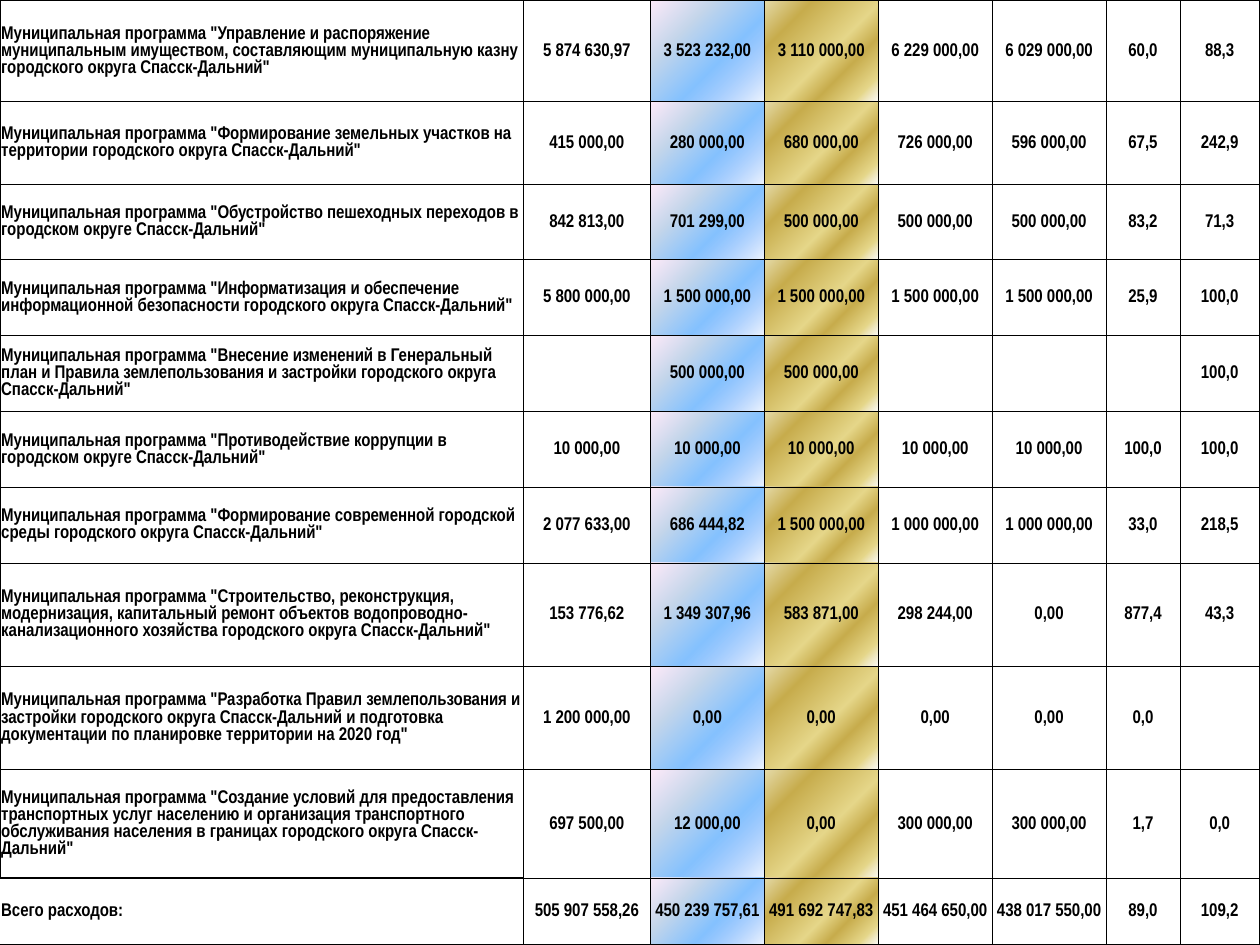
from lxml import etree
from pptx import Presentation
from pptx.dml.color import RGBColor
from pptx.enum.text import MSO_ANCHOR, PP_ALIGN
from pptx.oxml.ns import qn
from pptx.util import Pt

LEFT, CENTER, MIDDLE = PP_ALIGN.LEFT, PP_ALIGN.CENTER, MSO_ANCHOR.MIDDLE

PROGRAMS = [
    ("Управление и распоряжение муниципальным имуществом, составляющим "
     "муниципальную казну городского округа Спасск-Дальний",
     ["5 874 630,97", "3 523 232,00", "3 110 000,00", "6 229 000,00", "6 029 000,00", "60,0", "88,3"]),
    ("Формирование земельных участков на территории городского округа Спасск-Дальний",
     ["415 000,00", "280 000,00", "680 000,00", "726 000,00", "596 000,00", "67,5", "242,9"]),
    ("Обустройство пешеходных переходов в городском округе Спасск-Дальний",
     ["842 813,00", "701 299,00", "500 000,00", "500 000,00", "500 000,00", "83,2", "71,3"]),
    ("Информатизация и обеспечение информационной безопасности городского округа Спасск-Дальний",
     ["5 800 000,00", "1 500 000,00", "1 500 000,00", "1 500 000,00", "1 500 000,00", "25,9", "100,0"]),
    ("Внесение изменений в Генеральный план и Правила землепользования и "
     "застройки городского округа Спасск-Дальний",
     ["", "500 000,00", "500 000,00", "", "", "", "100,0"]),
    ("Противодействие коррупции в городском округе Спасск-Дальний",
     ["10 000,00", "10 000,00", "10 000,00", "10 000,00", "10 000,00", "100,0", "100,0"]),
    ("Формирование современной городской среды городского округа Спасск-Дальний",
     ["2 077 633,00", "686 444,82", "1 500 000,00", "1 000 000,00", "1 000 000,00", "33,0", "218,5"]),
    ("Строительство, реконструкция, модернизация, капитальный ремонт объектов "
     "водопроводно-канализационного хозяйства городского округа Спасск-Дальний",
     ["153 776,62", "1 349 307,96", "583 871,00", "298 244,00", "0,00", "877,4", "43,3"]),
    ("Разработка Правил землепользования и застройки городского округа Спасск-Дальний "
     "и подготовка документации по планировке территории на 2020 год",
     ["1 200 000,00", "0,00", "0,00", "0,00", "0,00", "0,0", ""]),
    ("Создание условий для предоставления транспортных услуг населению и организация "
     "транспортного обслуживания населения в границах городского округа Спасск-Дальний",
     ["697 500,00", "12 000,00", "0,00", "300 000,00", "300 000,00", "1,7", "0,0"]),
]
TOTAL = ["Всего расходов:", "505 907 558,26", "450 239 757,61", "491 692 747,83",
         "451 464 650,00", "438 017 550,00", "89,0", "109,2"]

COLORS = {"text": "000000", "border": "000000", "cell": "FFFFFF"}
# Column index -> (position %, colour, opacity %)
GRADIENTS = {
    2: [(0, "5E9EFF", 9), (40, "85C2FF", 100), (70, "C4D6EB", 100), (100, "FFEBFA", 100)],
    3: [(0, "E6DCAC", 8), (12, "E6D78A", 100), (30, "C7AC4C", 100),
        (45, "E6D78A", 100), (77, "C7AC4C", 100), (100, "E6DCAC", 100)],
}
UNFILLED = {(row, column) for row in (2, 3, 6) for column in (4, 5)}

COLUMN_WIDTHS = [299, 72.7] + [65.1] * 4 + [42.3, 45.3]
ROW_HEIGHTS = [58, 47.3, 42.9] + [43.4] * 4 + [58.9] * 2 + [62.3, 37.8]
THIN, THICK = 0.5, 1

CELL_FORMAT = {"margin_left": Pt(0.72), "margin_top": Pt(0.72), "margin_right": Pt(0.72),
               "margin_bottom": 0, "vertical_anchor": MIDDLE}
FONT_FORMAT = {"name": "Arial Narrow", "size": Pt(10.5), "bold": True}


def border_widths(row, column, last_row):
    """Widths of the left, right, top and bottom lines; 0 means no line."""
    widths = {"L": THIN, "R": THIN, "T": THIN, "B": THIN}
    if row == last_row and column <= 5:
        widths["B"] = THICK
    if column == 0 and row == last_row - 1:
        widths["B"] = THICK
    if column == 0 and row == last_row:
        widths.update(L=0, T=THICK)
    return widths


def add_borders(cell, widths):
    properties = cell._tc.get_or_add_tcPr()
    for side, width in widths.items():
        line = etree.SubElement(properties, qn(f"a:ln{side}"), w=str(int(Pt(width))))
        if width:
            fill = etree.SubElement(line, qn("a:solidFill"))
            etree.SubElement(fill, qn("a:srgbClr"), val=COLORS["border"])
        else:
            etree.SubElement(line, qn("a:noFill"))


def add_corner_gradient(cell, stops):
    """Circular gradient that starts from the lower right corner."""
    gradient = etree.SubElement(cell._tc.get_or_add_tcPr(), qn("a:gradFill"), rotWithShape="1")
    stop_list = etree.SubElement(gradient, qn("a:gsLst"))
    for position, color, opacity in stops:
        stop = etree.SubElement(stop_list, qn("a:gs"), pos=str(position * 1000))
        stop_color = etree.SubElement(stop, qn("a:srgbClr"), val=color)
        if opacity < 100:
            etree.SubElement(stop_color, qn("a:alpha"), val=str(opacity * 1000))
    circle = etree.SubElement(gradient, qn("a:path"), path="circle")
    etree.SubElement(circle, qn("a:fillToRect"), l="100000", t="100000")


def fill_cell(cell, row, column):
    if column in GRADIENTS:
        add_corner_gradient(cell, GRADIENTS[column])
    elif (row, column) in UNFILLED:
        cell.fill.background()
    else:
        cell.fill.solid()
        cell.fill.fore_color.rgb = RGBColor.from_string(COLORS["cell"])


def write_cell(cell, text, alignment):
    for name, value in CELL_FORMAT.items():
        setattr(cell, name, value)
    if not text:
        return
    paragraph = cell.text_frame.paragraphs[0]
    paragraph.alignment = alignment
    run = paragraph.add_run()
    run.text = text
    for name, value in FONT_FORMAT.items():
        setattr(run.font, name, value)
    run.font.color.rgb = RGBColor.from_string(COLORS["text"])


def main():
    presentation = Presentation()
    presentation.slide_width, presentation.slide_height = Pt(720), Pt(540)
    slide = presentation.slides.add_slide(presentation.slide_layouts[6])

    rows = [[f'Муниципальная программа "{title}"', *amounts] for title, amounts in PROGRAMS]
    rows.append(TOTAL)
    budget = slide.shapes.add_table(len(rows), len(TOTAL), 0, 0, Pt(720), Pt(540)).table
    budget.first_row = budget.horz_banding = False
    for column, width in zip(budget.columns, COLUMN_WIDTHS):
        column.width = Pt(width)
    for row, height in zip(budget.rows, ROW_HEIGHTS):
        row.height = Pt(height)

    for r, texts in enumerate(rows):
        for c, text in enumerate(texts):
            cell = budget.cell(r, c)
            write_cell(cell, text, CENTER if c else LEFT)
            add_borders(cell, border_widths(r, c, len(rows) - 1))
            fill_cell(cell, r, c)

    presentation.save("out.pptx")


if __name__ == "__main__":
    main()
